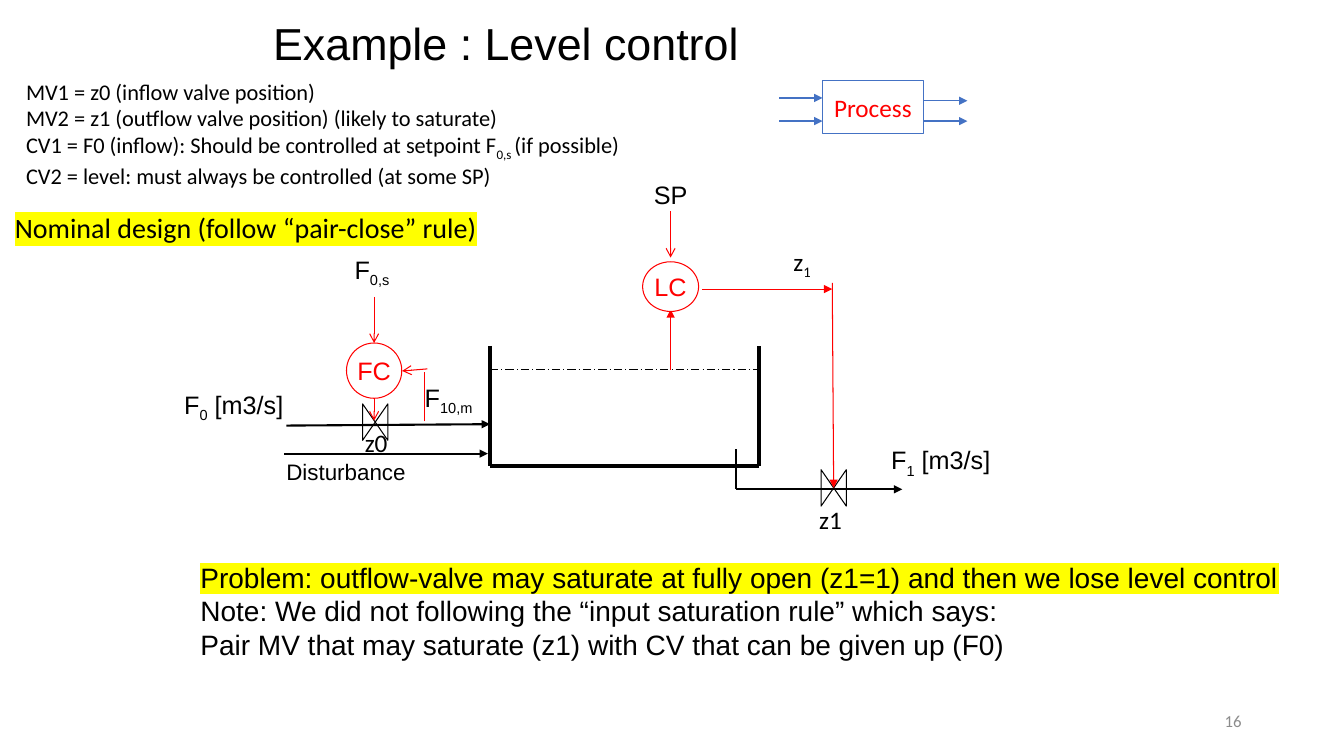
import pptx
import pptx.dml.color
import pptx.enum.dml
import pptx.enum.shapes
import pptx.enum.text
import pptx.oxml
import pptx.oxml.ns
import pptx.util
from collections import namedtuple
from dataclasses import dataclass

Pt = pptx.util.Pt
Shape = pptx.enum.shapes.MSO_SHAPE
Align = pptx.enum.text.PP_ALIGN
Anchor = pptx.enum.text.MSO_ANCHOR
AutoSize = pptx.enum.text.MSO_AUTO_SIZE
Dash = pptx.enum.dml.MSO_LINE
Box = namedtuple("Box", "left top width height")


@dataclass(frozen=True)
class Theme:
    ink: str = "000000"
    control: str = "FF0000"
    process: str = "4472C4"
    paper: str = "FFFFFF"
    muted: str = "8C8C8C"
    marker: str = "FFFF00"
    sans: str = "Arial"
    body: str = "Calibri"
    title: int = 32
    large: int = 20
    label: int = 18
    small: int = 16
    footer: int = 12


THEME = Theme()


def rgb(colour):
    return pptx.dml.color.RGBColor.from_string(colour)


def sub_element(parent, tag, **attributes):
    child = parent.makeelement(pptx.oxml.ns.qn(tag), attributes)
    parent.append(child)
    return child


def write(frame, lines, size, font, colour, align, marked=()):
    """Fill a frame; text between ~ marks is subscript, marked lines are highlighted."""
    for number, line in enumerate(lines):
        paragraph = frame.paragraphs[0] if number == 0 else frame.add_paragraph()
        paragraph.alignment = align
        for part, words in enumerate(line.split("~")):
            if not words:
                continue
            run = paragraph.add_run()
            run.text = words
            for name, value in {"size": Pt(size), "name": font}.items():
                setattr(run.font, name, value)
            run.font.color.rgb = rgb(colour)
            properties = run.font._element
            if part % 2:
                properties.set("baseline", "-25000")
            if number in marked:
                highlight = sub_element(properties, "a:highlight")
                sub_element(highlight, "a:srgbClr", val=THEME.marker)
                properties.find(pptx.oxml.ns.qn("a:latin")).addprevious(highlight)


def add_text(slide, box, *lines, size=THEME.label, font=THEME.sans, colour=THEME.ink,
             align=Align.LEFT, marked=(), wrap=False, anchor=Anchor.TOP):
    frame = slide.shapes.add_textbox(*map(Pt, box)).text_frame
    fit = AutoSize.NONE if wrap else AutoSize.SHAPE_TO_FIT_TEXT
    for name, value in {"word_wrap": wrap, "auto_size": fit, "vertical_anchor": anchor}.items():
        setattr(frame, name, value)
    write(frame, lines, size, font, colour, align, marked)


def add_node(slide, kind, box, colour, width=0.75, fill=None, text="",
             font=THEME.sans, text_colour=THEME.control, wrap=False):
    node = slide.shapes.add_shape(kind, *map(Pt, box))
    node.shadow.inherit = False
    if fill:
        node.fill.solid()
        node.fill.fore_color.rgb = rgb(fill)
    else:
        node.fill.background()
    node.line.color.rgb = rgb(colour)
    node.line.width = Pt(width)
    if text:
        node.text_frame.word_wrap = wrap
        node.text_frame.vertical_anchor = Anchor.MIDDLE
        write(node.text_frame, [text], THEME.label, font, text_colour, Align.CENTER)
    return node


def add_line(slide, start, end, colour=THEME.ink, width=0.75, arrow=None, dash=None):
    line = slide.shapes.add_connector(pptx.enum.shapes.MSO_CONNECTOR.STRAIGHT,
                                      *map(Pt, (*start, *end)))
    line.line.color.rgb = rgb(colour)
    line.line.width = Pt(width)
    if dash:
        line.line.dash_style = dash
    if arrow:
        sub_element(line.line._get_or_add_ln(), "a:tailEnd", type=arrow)
    sub_element(line._element.spPr, "a:effectLst")


def add_valve(slide, x, y):
    """Centre an upright valve symbol on a point."""
    valve = add_node(slide, Shape.FLOWCHART_COLLATE, Box(x - 13, y - 9, 26, 18), THEME.ink)
    valve.rotation = 90


def add_tank(slide, box):
    left, top, width, height = box
    right, bottom = left + width, top + height
    corners = [(left, top), (left, bottom), (right, bottom), (right, top)]
    for start, end in zip(corners, corners[1:]):
        add_line(slide, start, end, width=3)
    add_line(slide, (left, top + 17), (right, top + 17), dash=Dash.LONG_DASH_DOT)

    outlet, pipe = right - 16.5, bottom + 16.5
    add_line(slide, (outlet, bottom - 12), (outlet, pipe), width=1.5)
    for start, end in (((outlet, pipe), (right + 102.5, pipe)),
                       ((left - 147, bottom - 9), (left - 1.5, bottom - 9)),
                       ((left - 145.5, bottom - 29), (left, bottom - 30))):
        add_line(slide, start, end, width=1.5, arrow="triangle")
    add_valve(slide, right + 53.5, pipe - 1)
    add_valve(slide, left - 82, bottom - 31.5)

    add_text(slide, Box(left - 152.5, bottom - 9.5, 101, 27), "Disturbance", size=THEME.small)
    add_text(slide, Box(right + 87.5, bottom - 19, 87, 29), "F~1~ [m3/s]")
    add_text(slide, Box(left - 225.5, bottom - 58.5, 87, 29), "F~0~ [m3/s]")
    add_text(slide, Box(right + 36, bottom + 24, 31, 29), "z1", font=THEME.body)
    add_text(slide, Box(left - 96.5, bottom - 31.5, 31, 29), "z0", font=THEME.body)


def add_controller(slide, box, name, signals, labels):
    """Draw a controller circle; signals and labels are offsets from its top centre."""
    x, y = box.left + box.width / 2, box.top
    for x1, y1, x2, y2, width, arrow in signals:
        add_line(slide, (x + x1, y + y1), (x + x2, y + y2), THEME.control, width, arrow)
    add_node(slide, Shape.OVAL, box, THEME.control, fill=THEME.paper, text=name)
    for dx, dy, width, text, font in labels:
        add_text(slide, Box(x + dx, y + dy, width, 29), text, font=font, align=Align.CENTER)


def add_level_control(slide, box):
    signals = [(0, 77, 0, 34, 1, "triangle"),
               (22.5, 19.5, 115.5, 19.5, 0.75, "triangle"),
               (115.5, 15, 116.5, 161.5, 0.75, "triangle"),
               (0, -36, 0, -3, 0.75, "arrow")]
    labels = [(-19.5, -62.5, 39, "SP", THEME.sans), (80, -14.5, 28, "z~1~", THEME.body)]
    add_controller(slide, box, "LC", signals, labels)


def add_flow_control(slide, box):
    signals = [(36, 56, 36, 21, 0.75, None),
               (38, 18.5, 20, 20, 0.75, "arrow"),
               (0, 39.5, 0, 55.5, 0.75, "arrow"),
               (0, -33, 0, 0, 0.75, "arrow")]
    labels = [(27, 24.5, 52.5, "F~10,m~", THEME.sans), (-22.5, -67, 42, "F~0,s~", THEME.sans)]
    add_controller(slide, box, "FC", signals, labels)


def add_process(slide, box):
    """Draw the process block with two inputs and two outputs."""
    add_node(slide, Shape.RECTANGLE, box, THEME.process, 0.5, text="Process",
             font=THEME.body, wrap=True)
    reach, right = 31, box.left + box.width
    for start, offset in ((box.left - reach, 29), (box.left - reach, 12.5),
                          (right + 0.5, 14.5), (right + 0.5, 29)):
        y = box.top + offset
        add_line(slide, (start, y), (start + reach, y), THEME.process, 1, "triangle")


def add_notes_on_design(slide, box):
    """Place the title, variable list, conclusions and page number in the slide box."""
    left, top, width, height = box
    add_text(slide, Box(left + 188, top + 8, 358.5, 46), "Example : Level control",
             size=THEME.title)
    add_text(slide, Box(left + 11.5, top + 52, 480, 85),
             "MV1 = z0 (inflow valve position)",
             "MV2 = z1 (outflow valve position) (likely to saturate)",
             "CV1 = F0 (inflow): Should be controlled at setpoint F~0,s ~(if possible)",
             "CV2 = level: must always be controlled (at some SP)",
             size=THEME.small, font=THEME.body, wrap=True)
    add_text(slide, Box(left + 3.5, top + 147, 348, 53),
             "Nominal design (follow “pair-close” rule)",
             size=THEME.large, font=THEME.body, marked=(0,))
    add_text(slide, Box(left + 136, top + 396.5, 796.5, 80),
             "Problem: outflow-valve may saturate at fully open (z1=1) and then we lose level control",
             "Note: We did not following the “input saturation rule” which says:",
             "Pair MV that may saturate (z1) with CV that can be given up (F0)",
             size=THEME.large, marked=(0,))
    add_text(slide, Box(left + width - 282, top + height - 39.5, 216, 29), "16",
             size=THEME.footer, font=THEME.body, colour=THEME.muted,
             align=Align.RIGHT, wrap=True, anchor=Anchor.MIDDLE)


def main():
    deck = pptx.Presentation()
    deck.slide_width, deck.slide_height = Pt(960), Pt(540)
    slide = deck.slides.add_slide(deck.slide_layouts[6])
    add_tank(slide, Box(350, 247, 192, 86))
    add_level_control(slide, Box(459, 187, 40, 35.5))
    add_flow_control(slide, Box(247.5, 245, 39.5, 39.5))
    add_notes_on_design(slide, Box(0, 0, 960, 540))
    add_process(slide, Box(587.5, 57.5, 72, 38))
    deck.save("out.pptx")


if __name__ == "__main__":
    main()
